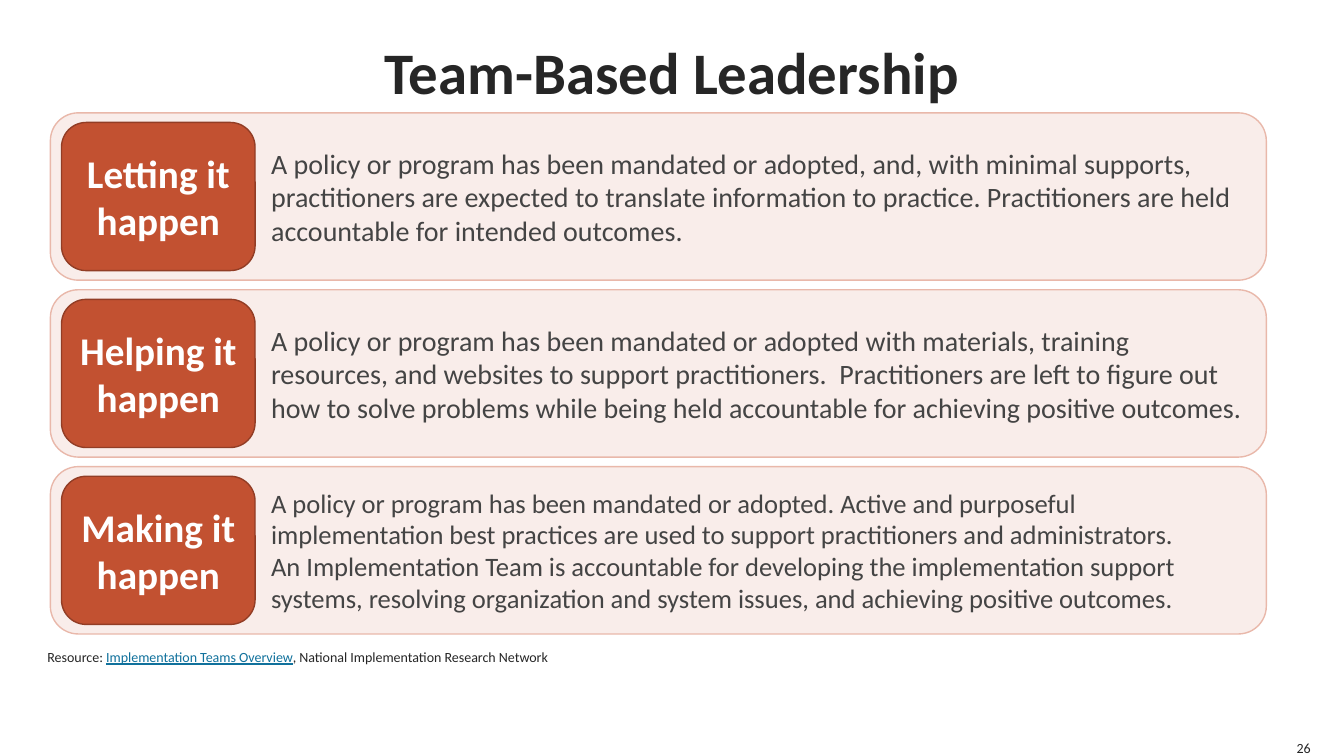
import pptx
import pptx.dml.color
import pptx.enum.shapes
import pptx.enum.text
import pptx.util

RGBColor = pptx.dml.color.RGBColor
INK = RGBColor(0x26, 0x26, 0x26)
BODY = RGBColor(0x44, 0x44, 0x44)
LINK = RGBColor(0x10, 0x71, 0x9C)
WHITE = RGBColor(0xFF, 0xFF, 0xFF)
CARD_FILL = RGBColor(0xF9, 0xED, 0xEA)
CARD_LINE = RGBColor(0xE9, 0xB8, 0xAA)
TAG_FILL = RGBColor(0xC2, 0x51, 0x31)
TAG_LINE = RGBColor(0x92, 0x3D, 0x25)

Align = pptx.enum.text.PP_ALIGN
Anchor = pptx.enum.text.MSO_ANCHOR

EMU_PER_PX = 4572  # 200 px to the inch
CARD_TOP, CARD_STEP = 224, 351
CARD_INDENT = 402

LEVELS = [
    ("Letting it happen", 20, [
        "A policy or program has been mandated or adopted, and, with minimal supports, "
        "practitioners are expected to translate information to practice. "
        "Practitioners are held accountable for intended outcomes."]),
    ("Helping it happen", 20, [
        "A policy or program has been mandated or adopted with materials, training "
        "resources, and websites to support practitioners.  Practitioners are left to "
        "figure out how to solve problems while being held accountable for achieving "
        "positive outcomes."]),
    ("Making it happen", 19, [
        "A policy or program has been mandated or adopted. Active and purposeful "
        "implementation best practices are used to support practitioners and "
        "administrators.",
        "An Implementation Team is accountable for developing the implementation "
        "support systems, resolving organization and system issues, and achieving "
        "positive outcomes."]),
]


def px(length):
    return pptx.util.Emu(length * EMU_PER_PX)


class SlideBuilder:
    font_name = "Calibri"

    def __init__(self, slide):
        self.slide = slide

    def style(self, span, size, color, bold=False, underline=False):
        span.font.name = self.font_name
        span.font.size = pptx.util.Pt(size)
        span.font.color.rgb = color
        span.font.bold = bold
        span.font.underline = underline

    def text(self, bounds, spans, size, align=Align.LEFT, anchor=Anchor.MIDDLE, bold=False):
        """Add a one-paragraph box without margins; spans are (wording, color, underline)."""
        box = self.slide.shapes.add_textbox(*map(px, bounds))
        frame = box.text_frame
        frame.word_wrap = True
        frame.vertical_anchor = anchor
        frame.margin_left = frame.margin_right = frame.margin_top = frame.margin_bottom = 0
        para = frame.paragraphs[0]
        para.alignment = align
        for wording, color, underline in spans:
            span = para.add_run()
            span.text = wording
            self.style(span, size, color, bold, underline)

    def panel(self, bounds, fill, line, paragraphs, size, color,
              align=Align.LEFT, bold=False, indent=0):
        shape = self.slide.shapes.add_shape(
            pptx.enum.shapes.MSO_SHAPE.ROUNDED_RECTANGLE, *map(px, bounds))
        shape.shadow.inherit = False
        shape.fill.solid()
        shape.fill.fore_color.rgb = fill
        shape.line.color.rgb = line
        shape.line.width = pptx.util.Pt(1)
        frame = shape.text_frame
        frame.word_wrap = True
        frame.vertical_anchor = Anchor.MIDDLE
        frame.text = "\n".join(paragraphs)
        for para in frame.paragraphs:
            para.alignment = align
            para._p.get_or_add_pPr().set("marL", str(px(indent)))
            for span in para.runs:
                self.style(span, size, color, bold)

    def level(self, top, name, size, paragraphs):
        """Add a wide description card with its name tag on the left."""
        self.panel((100, top, 2412, 332), CARD_FILL, CARD_LINE, paragraphs, size, BODY,
                   indent=CARD_INDENT)
        self.panel((122, top + 19, 384, 294), TAG_FILL, TAG_LINE, [name], 28, WHITE,
                   align=Align.CENTER, bold=True)


def main():
    deck = pptx.Presentation()
    deck.slide_width, deck.slide_height = px(2666), px(1500)
    page = SlideBuilder(deck.slides.add_slide(deck.slide_layouts[6]))

    page.text((100, 0, 2466, 280), [("Team-Based Leadership", INK, False)], 42,
              align=Align.CENTER, bold=True)
    page.text((2566, 1466, 34, 34), [("26", INK, False)], 10,
              align=Align.RIGHT, anchor=Anchor.BOTTOM)
    for index, (name, size, paragraphs) in enumerate(LEVELS):
        page.level(CARD_TOP + index * CARD_STEP, name, size, paragraphs)
    page.text((94, 1278, 2480, 42), [
        ("Resource: ", INK, False),
        ("Implementation Teams Overview", LINK, True),
        (", National Implementation Research Network", INK, False),
    ], 10, anchor=Anchor.BOTTOM)

    deck.save("out.pptx")


if __name__ == "__main__":
    main()
